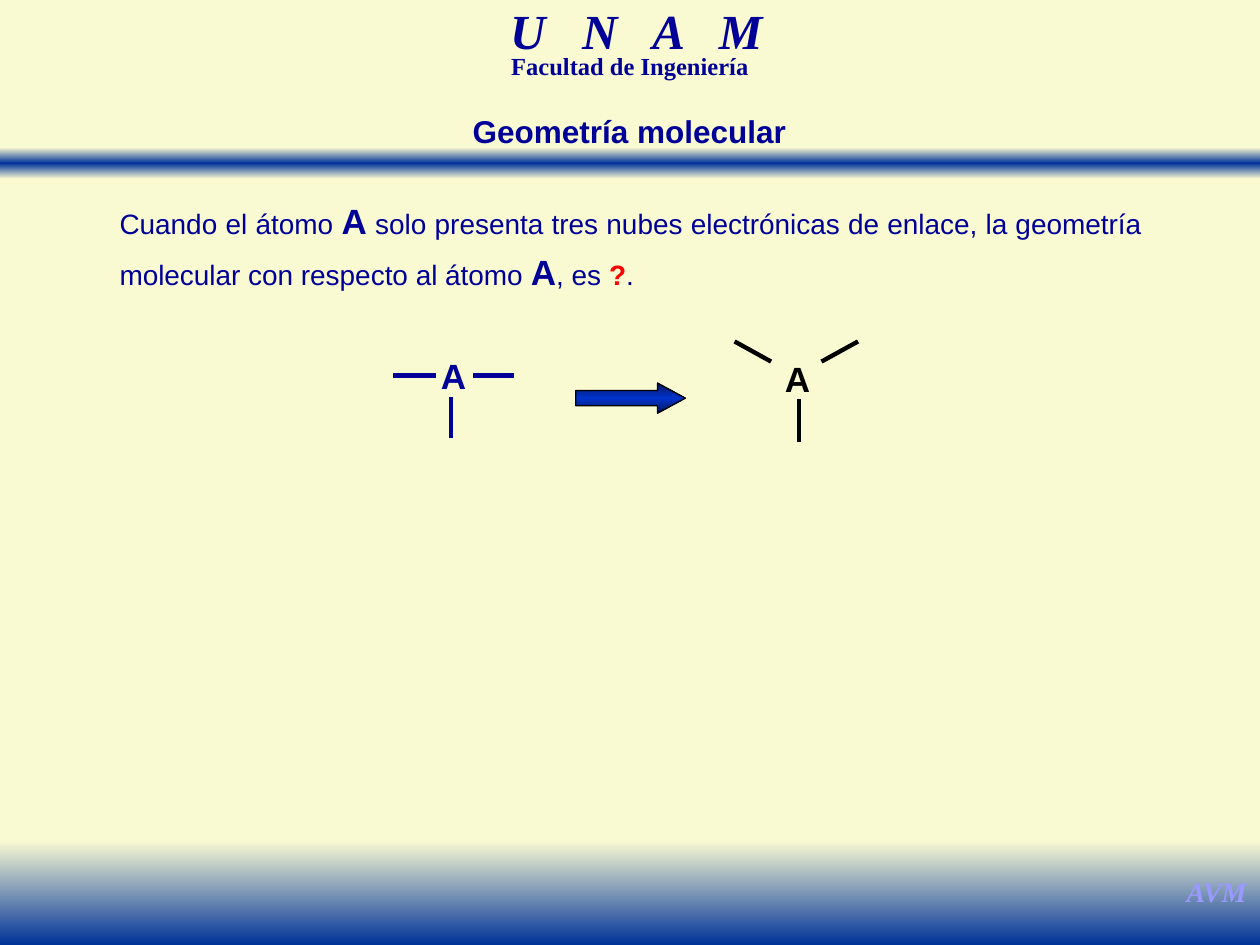
"""Build the molecular geometry slide with its question and bond diagrams."""
import copy

import pptx
import pptx.dml.color
import pptx.enum.shapes
import pptx.enum.text
import pptx.oxml.ns
import pptx.util
from pptx.dml.color import RGBColor
from pptx.util import Inches, Pt

CREAM = RGBColor(0xFA, 0xFA, 0xD2)
BLUE = RGBColor(0x00, 0x33, 0x99)
NAVY = RGBColor(0x00, 0x00, 0x99)
LILAC = RGBColor(0x99, 0x99, 0xFF)
RED = RGBColor(0xFF, 0x00, 0x00)
BLACK = RGBColor(0x00, 0x00, 0x00)
DARK_BLUE = RGBColor(0x00, 0x17, 0x5C)
BRIGHT_BLUE = RGBColor(0x00, 0x33, 0xCC)

ALIGN = pptx.enum.text.PP_ALIGN
SHAPE = pptx.enum.shapes.MSO_SHAPE
SERIF = "Times New Roman"
PADDING = (0.1, 0.05, 0.1, 0.05)

TITLE = "Geometría molecular"
ATOM = dict(size=20, bold=True)
QUESTION = [
    ("Cuando el átomo ", {}),
    ("A", ATOM),
    (" solo presenta tres nubes electrónicas de enlace, la geometría "
     "molecular con respecto al átomo ", {}),
    ("A", ATOM),
    (", es ", {}),
    ("?", dict(bold=True, color=RED)),
    (".", {}),
]
BANDS = [
    ((0, 1.17, 10, 0.25), (CREAM, BLUE, CREAM)),
    ((0, 6.67, 10, 0.83), (CREAM, BLUE)),
]
LABELS = [
    ("AVM", (9.31, 6.89, 0.69, 0.37),
     dict(size=16, color=LILAC, italic=True, wrap=False)),
    ("U N A M", (3.09, 0.08, 3.92, 0.43),
     dict(size=28, italic=True, line_spacing=0.7, tracking=7)),
    ("Facultad de Ingeniería", (3.21, 0.42, 3.58, 0.26),
     dict(size=14, line_spacing=0.7)),
]
MOLECULES = [
    (NAVY, (3.5, 2.81, 0.2, 0.33),
     [(3.75, 2.98, 4.08, 2.98), (3.12, 2.98, 3.46, 2.98), (3.58, 3.48, 3.58, 3.15)]),
    (BLACK, (6.23, 2.84, 0.2, 0.33),
     [(6.52, 2.87, 6.81, 2.71), (6.34, 3.51, 6.34, 3.17), (6.12, 2.87, 5.83, 2.71)]),
]


def inches(values):
    return [Inches(value) for value in values]


def write_text(box, text, size=16, color=NAVY, font="Arial", bold=False, italic=False,
               align=ALIGN.CENTER, line_spacing=1.0, wrap=True, padding=PADDING, tracking=0):
    """Fill a box with a string or with (string, format) spans."""
    frame = box.text_frame
    frame.word_wrap = wrap
    frame.auto_size = pptx.enum.text.MSO_AUTO_SIZE.NONE
    frame.vertical_anchor = pptx.enum.text.MSO_ANCHOR.TOP
    (frame.margin_left, frame.margin_top,
     frame.margin_right, frame.margin_bottom) = inches(padding)
    para = frame.paragraphs[0]
    para.alignment = align
    para.line_spacing = line_spacing
    para.space_before = Pt(0)
    for words, own in [(text, {})] if isinstance(text, str) else text:
        span = para.add_run()
        span.text = words
        span.font.name = font
        span.font.size = Pt(own.get("size", size))
        span.font.bold = own.get("bold", bold)
        span.font.italic = italic
        span.font.color.rgb = own.get("color", color)
        if tracking:
            span.font._element.set("spc", str(tracking * 100))


def add_gradient_shape(page, kind, place, colors):
    shape = page.shapes.add_shape(kind, *inches(place))
    shape.shadow.inherit = False
    shape.line.fill.background()
    shape.fill.gradient()
    shape.fill.gradient_angle = 270
    stop_list = shape._element.spPr.find(".//" + pptx.oxml.ns.qn("a:gsLst"))
    while len(stop_list) < len(colors):
        stop_list.append(copy.deepcopy(stop_list[-1]))
    for index, (stop, color) in enumerate(zip(shape.fill.gradient_stops, colors)):
        stop.color.rgb = color
        stop.position = index / (len(colors) - 1)
    return shape


def add_molecule(page, color, place, bonds):
    group = page.shapes.add_group_shape()
    write_text(group.shapes.add_textbox(*inches(place)), "A", size=20, color=color,
               bold=True, align=ALIGN.JUSTIFY, wrap=False, padding=(0, 0, 0, 0))
    for ends in bonds:
        bond = group.shapes.add_connector(
            pptx.enum.shapes.MSO_CONNECTOR.STRAIGHT, *inches(ends))
        bond.line.color.rgb = color
        bond.line.width = Pt(2.5)
        bond._element.spPr.append(pptx.oxml.parse_xml(
            "<a:effectLst %s/>" % pptx.oxml.ns.nsdecls("a")))


def main():
    deck = pptx.Presentation()
    deck.slide_width, deck.slide_height = Inches(10), Inches(7.5)
    page = deck.slides.add_slide(deck.slide_layouts.get_by_name("Title Only"))
    page.background.fill.solid()
    page.background.fill.fore_color.rgb = CREAM

    for place, colors in BANDS:
        add_gradient_shape(page, SHAPE.RECTANGLE, place, colors)
    for text, place, style in LABELS:
        write_text(page.shapes.add_textbox(*inches(place)), text,
                   font=SERIF, bold=True, **style)

    write_text(page.shapes.add_textbox(*inches((0.85, 1.47, 8.31, 0.91))), QUESTION,
               align=ALIGN.JUSTIFY, line_spacing=1.2)

    for molecule in MOLECULES:
        add_molecule(page, *molecule)
    arrow = add_gradient_shape(page, SHAPE.RIGHT_ARROW, (4.57, 3.04, 0.87, 0.24),
                               (DARK_BLUE, BRIGHT_BLUE, DARK_BLUE))
    arrow.adjustments[0], arrow.adjustments[1] = 0.5, 0.92
    arrow.line.color.rgb = BLACK
    arrow.line.width = Pt(0.75)

    title = page.shapes.title
    title.left, title.top, title.width, title.height = inches((3.64, 0.84, 2.71, 0.4))
    write_text(title, TITLE, size=18, bold=True, wrap=False)
    page.shapes._spTree.append(title._element)
    deck.save("out.pptx")


if __name__ == "__main__":
    main()
